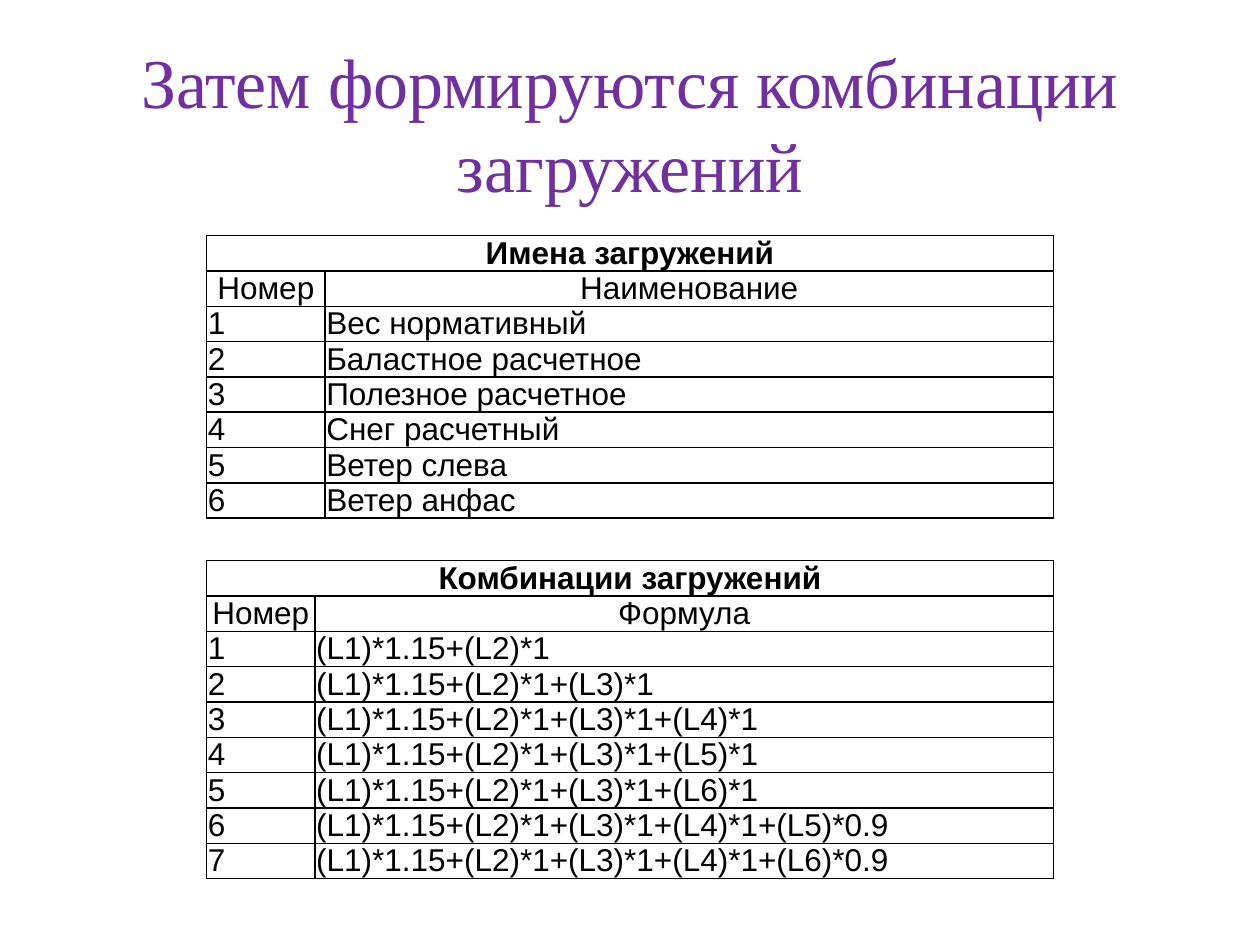
import pptx
import pptx.util
import pptx.dml.color
import pptx.enum.text
import pptx.oxml.ns
from lxml import etree

Inches = pptx.util.Inches
Pt = pptx.util.Pt
ALIGN = pptx.enum.text.PP_ALIGN
ANCHOR = pptx.enum.text.MSO_ANCHOR

ROW = 0.28

LOADS = ["Вес нормативный", "Баластное расчетное", "Полезное расчетное",
         "Снег расчетный", "Ветер слева", "Ветер анфас"]

BASE = "(L1)*1.15+(L2)*1"
TAILS = ["", "+(L3)*1", "+(L3)*1+(L4)*1", "+(L3)*1+(L5)*1", "+(L3)*1+(L6)*1",
         "+(L3)*1+(L4)*1+(L5)*0.9", "+(L3)*1+(L4)*1+(L6)*0.9"]


def color(code):
    return pptx.dml.color.RGBColor.from_string(code)


def style(para, name, size, code, align, bold=False):
    para.alignment = align
    font = para.font
    font.name, font.size, font.bold = name, Pt(size), bold
    font.color.rgb = color(code)


def border(cell, code="000000", width=1):
    qn = pptx.oxml.ns.qn
    props = cell._tc.get_or_add_tcPr()
    for side in ("a:lnL", "a:lnR", "a:lnT", "a:lnB"):
        line = etree.SubElement(props, qn(side), w=str(Pt(width)))
        fill = etree.SubElement(line, qn("a:solidFill"))
        etree.SubElement(fill, qn("a:srgbClr"), val=code)


def add_title(slide, text, left, top, width, height):
    title = slide.shapes.title
    title.left, title.top = Inches(left), Inches(top)
    title.width, title.height = Inches(width), Inches(height)
    frame = title.text_frame
    frame.text = text
    frame.word_wrap = True
    frame.vertical_anchor = ANCHOR.MIDDLE
    style(frame.paragraphs[0], "Times New Roman", 40, "7030A0", ALIGN.CENTER)


def add_list(slide, heading, label, items, first, left, top, width):
    """Numbered table: merged heading, column labels, then one row per item."""
    rows = [(heading, ""), ("Номер", label)]
    rows += [(str(num), item) for num, item in enumerate(items, 1)]
    table = slide.shapes.add_table(
        len(rows), 2, Inches(left), Inches(top),
        Inches(width), Inches(ROW * len(rows))).table
    table.first_row = table.horz_banding = False
    table.columns[0].width = Inches(first)
    table.columns[1].width = Inches(width - first)

    for r, texts in enumerate(rows):
        table.rows[r].height = Inches(ROW)
        for c, text in enumerate(texts):
            cell = table.cell(r, c)
            head = r < 2
            cell.margin_left = cell.margin_right = Inches(0 if head else 0.01)
            cell.margin_top = cell.margin_bottom = 0
            border(cell)
            cell.fill.background()
            cell.text = text
            style(cell.text_frame.paragraphs[0], "Arial", 18, "000000",
                  ALIGN.CENTER if head else ALIGN.LEFT, bold=r == 0)
    table.cell(0, 0).merge(table.cell(0, 1))


def main():
    deck = pptx.Presentation()
    deck.slide_width, deck.slide_height = Inches(10), Inches(7.5)
    slide = deck.slides.add_slide(deck.slide_layouts[5])

    # Title
    add_title(slide, "Затем формируются комбинации загружений",
              0.5, 0.3, 9, 1.34)

    # Load names, then their combinations
    add_list(slide, "Имена загружений", "Наименование", LOADS,
             0.94, 1.64, 1.87, 6.72)
    add_list(slide, "Комбинации загружений", "Формула",
             [BASE + tail for tail in TAILS], 0.86, 1.64, 4.45, 6.72)

    deck.save("out.pptx")


if __name__ == "__main__":
    main()
